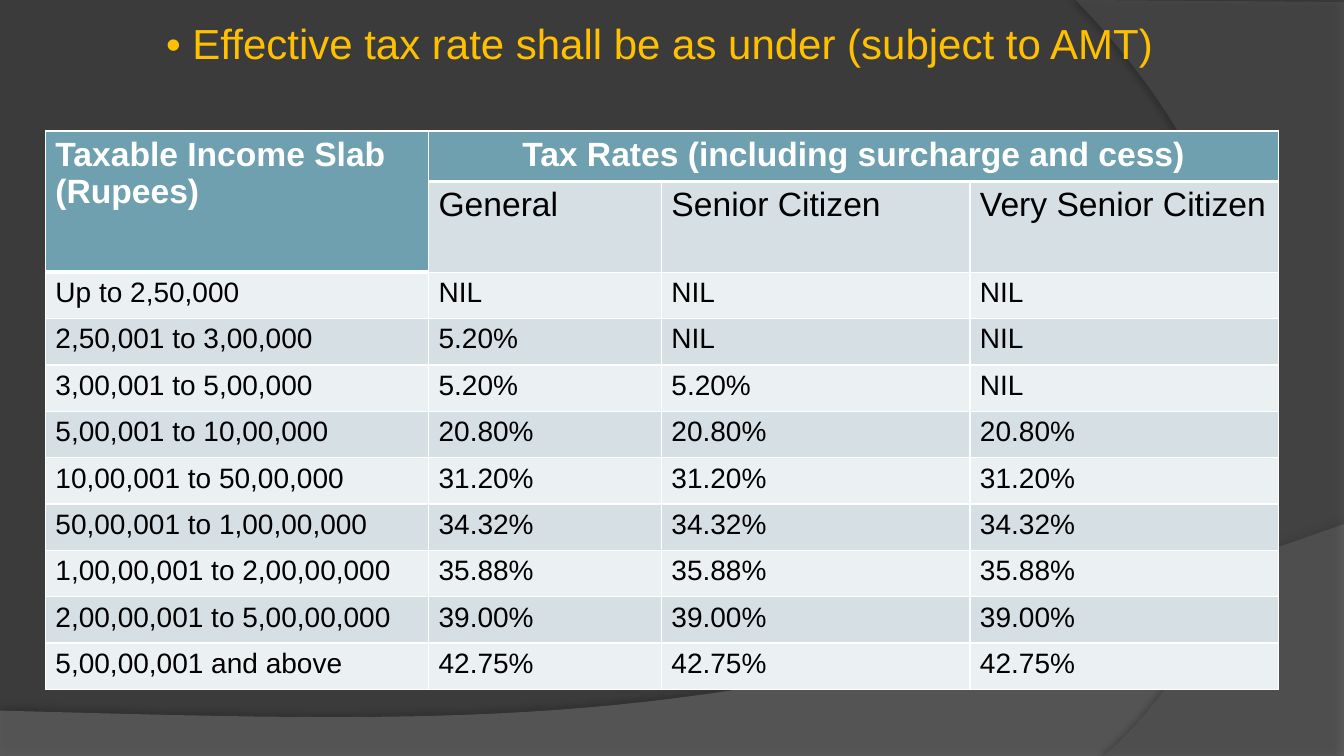
"""Build the effective tax rate slide."""
from lxml.etree import SubElement
from pptx import Presentation
from pptx.dml.color import RGBColor
from pptx.enum.text import PP_ALIGN as Align
from pptx.oxml.ns import qn
from pptx.util import Inches, Pt

TITLE = "• Effective tax rate shall be as under (subject to AMT)"
ROWS = [
    ("Taxable Income Slab\n(Rupees)", "Tax Rates (including surcharge and cess)", "", ""),
    ("", "General", "Senior Citizen", "Very Senior Citizen"),
    ("Up to 2,50,000", "NIL", "NIL", "NIL"),
    ("2,50,001 to 3,00,000", "5.20%", "NIL", "NIL"),
    ("3,00,001 to 5,00,000", "5.20%", "5.20%", "NIL"),
    ("5,00,001 to 10,00,000", "20.80%", "20.80%", "20.80%"),
    ("10,00,001 to 50,00,000", "31.20%", "31.20%", "31.20%"),
    ("50,00,001 to 1,00,00,000", "34.32%", "34.32%", "34.32%"),
    ("1,00,00,001 to 2,00,00,000", "35.88%", "35.88%", "35.88%"),
    ("2,00,00,001 to 5,00,00,000", "39.00%", "39.00%", "39.00%"),
    ("5,00,00,001 and above", "42.75%", "42.75%", "42.75%"),
]
COLUMN_WIDTHS = [3.8, 2.31, 3.06, 3.06]
ROW_HEIGHTS = [0.47, 0.85] + [0.46] * 9
BACKGROUND, GOLD, WHITE, BLACK = "3B3B3B", "FFC000", "FFFFFF", "000000"
HEADER, BANDS = "6EA0B0", ("EBF0F2", "D5DFE4")
SWOOSHES = [
    {"corners": [(0, 7.5), (13.33, 7.5)],
     "curve": [(13.33, 5.2), (7.45, 7.29), (5.21, 7.19), (0, 7.05)],
     "fill": "7F7F7F", "opacity": 45, "shadow": (35, 4, 3.5, 270)},
    {"corners": [(13.33, 0.02), (13.33, 7.5)],
     "curve": [(10.95, 7.5), (12.46, 6.19), (13.57, 3), (10.67, 0)],
     "fill": "5E5E5E", "opacity": 40, "shadow": (45, 4, 4, 180)},
]
CURVE_STEPS = 40


def color(hex_code):
    return RGBColor.from_string(hex_code)


def style(paragraph, size, hex_code, bold=False):
    for run in paragraph.runs:
        run.font.name, run.font.size, run.font.bold = "Arial", Pt(size), bold
        run.font.color.rgb = color(hex_code)


def curve_point(curve, t):
    weights = ((1 - t) ** 3, 3 * t * (1 - t) ** 2, 3 * t * t * (1 - t), t ** 3)
    return tuple(sum(w * p[axis] for w, p in zip(weights, curve)) for axis in (0, 1))


def set_opacity(color_element, percent):
    SubElement(color_element, qn("a:alpha"), val=str(percent * 1000))


def add_swoosh(slide, swoosh):
    curve = [curve_point(swoosh["curve"], i / CURVE_STEPS) for i in range(CURVE_STEPS + 1)]
    outline = [(Inches(x), Inches(y)) for x, y in swoosh["corners"] + curve]
    builder = slide.shapes.build_freeform(*outline[0])
    builder.add_line_segments(outline[1:], close=True)
    shape = builder.convert_to_shape()
    shape.fill.solid()
    shape.fill.fore_color.rgb = color(swoosh["fill"])
    shape.line.fill.background()
    shape.shadow.inherit = False
    properties = shape.fill._xPr
    set_opacity(properties.find(".//" + qn("a:srgbClr")), swoosh["opacity"])
    opacity, blur, distance, angle = swoosh["shadow"]
    shadow = SubElement(properties.find(qn("a:effectLst")), qn("a:outerShdw"),
                        blurRad=str(Pt(blur)), dist=str(Pt(distance)),
                        dir=str(angle * 60000), algn="ctr", rotWithShape="0")
    set_opacity(SubElement(shadow, qn("a:srgbClr"), val=BLACK), opacity)


def add_title(slide):
    box = slide.shapes.add_textbox(Inches(0.37), Inches(0.12), Inches(12.31), Inches(7.38))
    frame = box.text_frame
    frame.word_wrap = True
    frame.margin_left = Inches(0.14)
    frame.text = TITLE
    heading = frame.paragraphs[0]
    heading.alignment = Align.CENTER
    heading.space_before = Pt(4)
    style(heading, 30, GOLD)


def set_borders(cell, bottom):
    properties = cell._tc.get_or_add_tcPr()
    for side, width in (("L", 1), ("R", 1), ("T", 1), ("B", bottom)):
        line = SubElement(properties, qn("a:ln" + side), w=str(Pt(width)))
        SubElement(SubElement(line, qn("a:solidFill")), qn("a:srgbClr"), val=WHITE)


def add_rates(slide):
    table = slide.shapes.add_table(
        len(ROWS), len(COLUMN_WIDTHS), Inches(0.45), Inches(1.3),
        Inches(sum(COLUMN_WIDTHS)), Inches(sum(ROW_HEIGHTS))).table
    table.first_row = table.horz_banding = False
    for column, width in zip(table.columns, COLUMN_WIDTHS):
        column.width = Inches(width)
    for row, height in zip(table.rows, ROW_HEIGHTS):
        row.height = Inches(height)
    table.cell(0, 0).merge(table.cell(1, 0))
    table.cell(0, 1).merge(table.cell(0, 3))
    for r, texts in enumerate(ROWS):
        for c, text in enumerate(texts):
            cell = table.cell(r, c)
            header = r == 0 or (r == 1 and c == 0)
            set_borders(cell, 3 if header else 1)
            cell.fill.solid()
            cell.fill.fore_color.rgb = color(HEADER if header else BANDS[r % 2])
            if not text:
                continue
            cell.text_frame.text = text
            for paragraph in cell.text_frame.paragraphs:
                style(paragraph, 24 if r < 2 else 20, WHITE if header else BLACK, header)
    table.cell(0, 1).text_frame.paragraphs[0].alignment = Align.CENTER


def main():
    deck = Presentation()
    deck.slide_width, deck.slide_height = Inches(13.33), Inches(7.5)
    slide = deck.slides.add_slide(deck.slide_layouts[6])
    slide.background.fill.solid()
    slide.background.fill.fore_color.rgb = color(BACKGROUND)
    for swoosh in SWOOSHES:
        add_swoosh(slide, swoosh)
    add_title(slide)
    add_rates(slide)
    deck.save("out.pptx")


if __name__ == "__main__":
    main()
